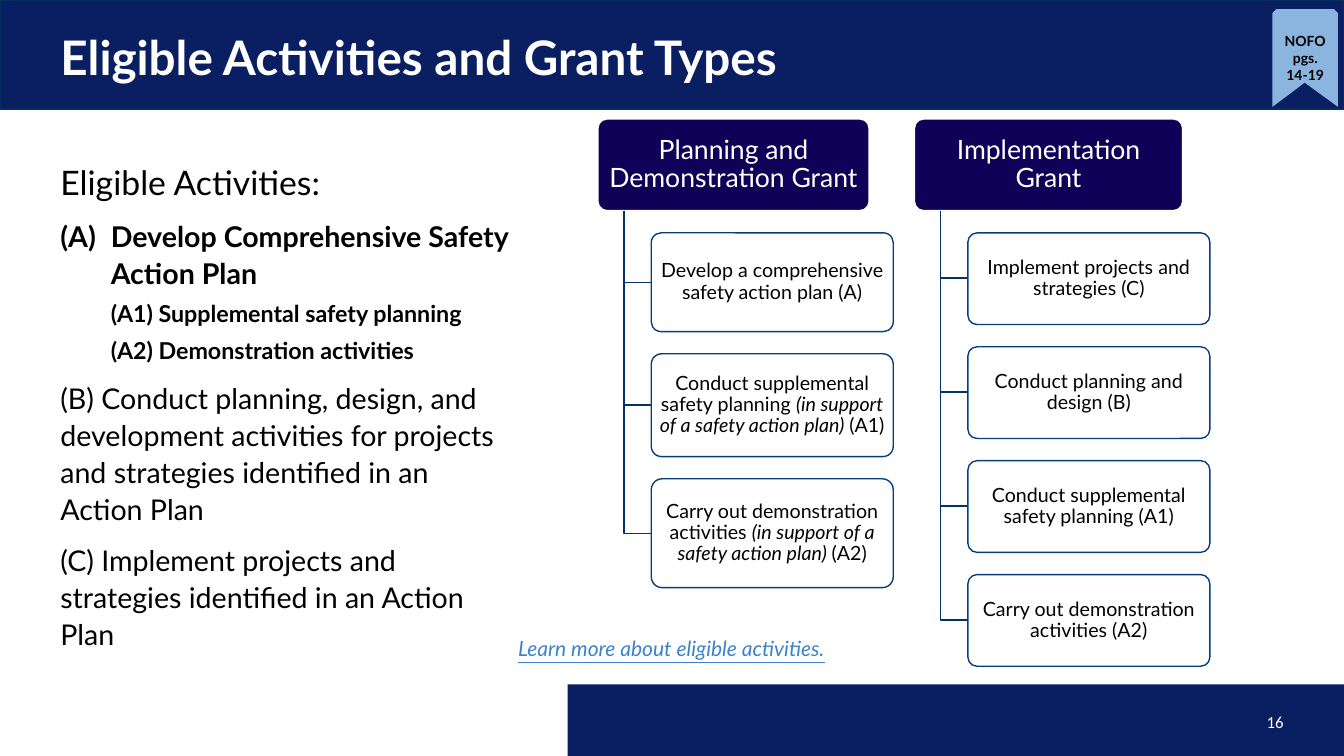
from dataclasses import dataclass
from math import cos, radians, sin

from lxml.etree import SubElement
from pptx import Presentation
from pptx.dml.color import RGBColor
from pptx.enum.shapes import MSO_SHAPE as Preset
from pptx.enum.text import MSO_ANCHOR as Anchor, MSO_AUTO_SIZE as AutoSize, PP_ALIGN as Align
from pptx.oxml.ns import qn
from pptx.util import Emu, Pt

PX = 9144  # EMU per px, 100 px to the inch


@dataclass(frozen=True)
class Theme:
    font: str = "Lato"
    number_font: str = "Calibri"
    band: str = "0A1F61"
    band_line: str = "042E5D"
    header: str = "0F0157"
    card_line: str = "063E7E"
    elbow: str = "053265"
    ribbon: str = "8BB4DF"
    link: str = "3D82CA"
    white: str = "FFFFFF"
    black: str = "000000"
    title_size: float = 34
    lead_size: float = 24.1
    body_size: float = 20.4
    detail_size: float = 16.6
    header_size: float = 19
    card_size: float = 14
    link_size: float = 15
    number_size: float = 12
    ribbon_size: float = 10


THEME = Theme()


@dataclass(frozen=True)
class Box:
    left: int
    top: int
    width: int
    height: int

    def emu(self) -> list[Emu]:
        return [Emu(v * PX) for v in (self.left, self.top, self.width, self.height)]


@dataclass(frozen=True)
class Activity:
    text: str
    size: float = THEME.body_size
    bold: bool = False
    before: int = 10
    margin: int = 0
    level: int = 0
    numbered: bool = False


@dataclass(frozen=True)
class Card:
    height: int
    text: str
    support: str = ""
    code: str = ""


@dataclass(frozen=True)
class Grant:
    header: Box
    name: str
    cards: tuple[Card, ...]


ACTIVITIES = (
    Activity("Eligible Activities:", THEME.lead_size, before=0),
    Activity("Develop Comprehensive Safety Action Plan", bold=True, margin=50, numbered=True),
    Activity("(A1) Supplemental safety planning", THEME.detail_size, True, 5, 50, 1),
    Activity("(A2) Demonstration activities", THEME.detail_size, True, 5, 50, 1),
    Activity("(B) Conduct planning, design, and development activities for projects "
             "and strategies identified in an Action Plan"),
    Activity("(C) Implement projects and strategies identified in an Action Plan"),
)
SUPPORT = "(in support of a safety action plan) "
GRANTS = (
    Grant(Box(593, 118, 269, 91), "Planning and Demonstration Grant", (
        Card(98, "Develop a comprehensive safety action plan (A)"),
        Card(102, "Conduct supplemental safety planning ", SUPPORT, "(A1)"),
        Card(108, "Carry out demonstration activities ", SUPPORT, "(A2)"),
    )),
    Grant(Box(907, 118, 266, 91), "Implementation Grant", (
        Card(91, "Implement projects and strategies (C)"),
        Card(91, "Conduct planning and design (B)"),
        Card(91, "Conduct supplemental safety planning (A1)"),
        Card(91, "Carry out demonstration activities (A2)"),
    )),
)
CARD_GAP = 22
CARD_WIDTH = 240
SPINE_INDENT = 26
BRANCH = 27


def write(paragraph, text: str, *, size: float, color: str = THEME.black, font: str = THEME.font,
          bold: bool = False, italic: bool = False, underline: bool = False,
          align: Align = Align.LEFT, spacing: float = 1.0) -> None:
    paragraph.alignment = align
    paragraph.line_spacing = spacing
    run = paragraph.add_run()
    run.text = text
    run.font.name, run.font.size = font, Pt(size)
    run.font.bold, run.font.italic, run.font.underline = bold, italic, underline
    run.font.color.rgb = RGBColor.from_string(color)


def frame_of(shape, anchor: Anchor = Anchor.TOP, inset: tuple[int, int] = (10, 5)):
    frame = shape.text_frame
    frame.word_wrap, frame.auto_size = True, AutoSize.NONE
    frame.vertical_anchor = anchor
    frame.margin_left = frame.margin_right = Emu(inset[0] * PX)
    frame.margin_top = frame.margin_bottom = Emu(inset[1] * PX)
    return frame


def paint(shape, fill: str | None, line: str | None = None) -> None:
    shape.shadow.inherit = False
    if fill:
        shape.fill.solid()
        shape.fill.fore_color.rgb = RGBColor.from_string(fill)
    else:
        shape.fill.background()
    if line:
        shape.line.color.rgb = RGBColor.from_string(line)
        shape.line.width = Pt(1)
    else:
        shape.line.fill.background()


def add_block(slide, box: Box, fill: str, line: str | None = None, rounded: bool = False):
    shape = slide.shapes.add_shape(Preset.ROUNDED_RECTANGLE if rounded else Preset.RECTANGLE, *box.emu())
    if rounded:
        shape.adjustments[0] = 0.1
    paint(shape, fill, line)
    return shape


def add_outline(slide, points: list[tuple[float, float]], closed: bool):
    builder = slide.shapes.build_freeform(*points[0], scale=PX)
    builder.add_line_segments(points[1:], close=closed)
    return builder.convert_to_shape()


def add_activities(slide) -> None:
    frame = frame_of(slide.shapes.add_textbox(*Box(50, 152, 468, 500).emu()))
    for index, activity in enumerate(ACTIVITIES):
        paragraph = frame.add_paragraph() if index else frame.paragraphs[0]
        paragraph.level = activity.level
        paragraph.space_before = Pt(activity.before)
        properties = paragraph._p.get_or_add_pPr()
        properties.set("marL", str(activity.margin * PX))
        properties.set("indent", str(-activity.margin * PX if activity.numbered else 0))
        if activity.numbered:
            SubElement(properties, qn("a:buAutoNum")).set("type", "alphaUcParenBoth")
        write(paragraph, activity.text, size=activity.size, bold=activity.bold, spacing=1.08)


def add_grant(slide, grant: Grant) -> None:
    header = add_block(slide, grant.header, THEME.header, THEME.white, rounded=True)
    write(frame_of(header, Anchor.MIDDLE, (4, 3)).paragraphs[0], grant.name, size=THEME.header_size,
          color=THEME.white, align=Align.CENTER, spacing=0.9)
    spine = grant.header.left + SPINE_INDENT
    bottom = grant.header.top + grant.header.height
    top = bottom + CARD_GAP
    for card in grant.cards:
        middle = top + card.height // 2
        elbow = add_outline(slide, [(spine, bottom), (spine, middle), (spine + BRANCH, middle)], False)
        paint(elbow, None, THEME.elbow)
        box = Box(spine + BRANCH, top, CARD_WIDTH, card.height)
        shape = add_block(slide, box, THEME.white, THEME.card_line, rounded=True)
        paragraph = frame_of(shape, Anchor.MIDDLE, (3, 2)).paragraphs[0]
        for text, italic in ((card.text, False), (card.support, True), (card.code, False)):
            if text:
                write(paragraph, text, size=THEME.card_size, italic=italic,
                      align=Align.CENTER, spacing=0.9)
        top += card.height + CARD_GAP


def add_ribbon(slide) -> None:
    left, top, right, bottom, radius = 1262, 9, 1327, 106, 6
    points = [(right, bottom)]
    for center, start in ((right - radius, 0), (left + radius, 90)):
        for angle in range(start, start + 91, 15):
            points.append((center + radius * cos(radians(angle)),
                           top + radius - radius * sin(radians(angle))))
    points += [(left, bottom), ((left + right) / 2, 82)]
    ribbon = add_outline(slide, points, True)
    paint(ribbon, THEME.ribbon)
    write(frame_of(ribbon, Anchor.MIDDLE).paragraphs[0], "NOFO pgs. 14-19",
          size=THEME.ribbon_size, bold=True, align=Align.CENTER)


def main() -> None:
    presentation = Presentation()
    presentation.slide_width, presentation.slide_height = Emu(1333 * PX), Emu(750 * PX)
    slide = presentation.slides.add_slide(presentation.slide_layouts[5])

    # Bands, with the title brought in front of them
    add_block(slide, Box(0, 0, 1333, 108), THEME.band, THEME.band_line)
    add_block(slide, Box(563, 679, 770, 71), THEME.band)
    title = slide.shapes.title
    slide.shapes.element.append(title.element)
    title.left, title.top, title.width, title.height = Box(50, 0, 1233, 108).emu()
    write(frame_of(title, Anchor.MIDDLE).paragraphs[0], "Eligible Activities and Grant Types",
          size=THEME.title_size, color=THEME.white, bold=True, spacing=1.08)

    # Slide number
    number = slide.shapes.add_textbox(*Box(983, 704, 300, 25).emu())
    write(frame_of(number, Anchor.MIDDLE).paragraphs[0], "16", size=THEME.number_size,
          color=THEME.white, font=THEME.number_font, align=Align.RIGHT)

    # Activities and grant trees
    add_activities(slide)
    for grant in GRANTS:
        add_grant(slide, grant)

    # Link line and page ribbon
    link = slide.shapes.add_textbox(*Box(504, 626, 392, 35).emu())
    write(frame_of(link).paragraphs[0], "Learn more about eligible activities.",
          size=THEME.link_size, color=THEME.link, italic=True, underline=True)
    add_ribbon(slide)
    presentation.save("out.pptx")


if __name__ == "__main__":
    main()
